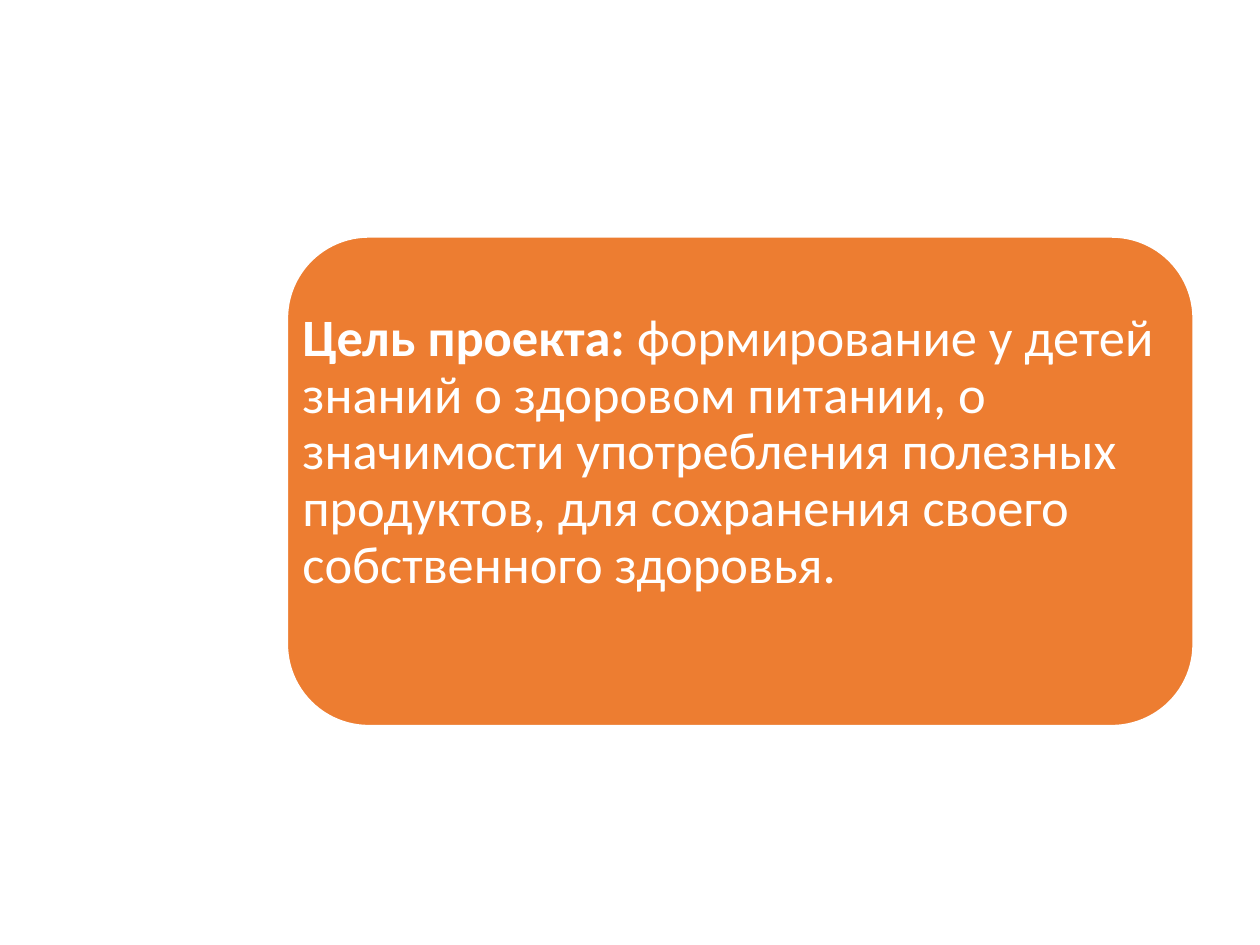
from pptx import Presentation
from pptx.dml.color import RGBColor
from pptx.enum.shapes import MSO_SHAPE
from pptx.enum.text import MSO_ANCHOR, PP_ALIGN
from pptx.util import Inches, Pt

ROUNDED = MSO_SHAPE.ROUNDED_RECTANGLE
MIDDLE = MSO_ANCHOR.MIDDLE
LEFT = PP_ALIGN.LEFT

WIDTH, HEIGHT = 10, 7.5
FONT = "Calibri"
ORANGE, WHITE = "ED7D31", "FFFFFF"
INSET = 0.12
TEXT_LIFT = 0.45  # one line of text, kept free below the statement

GOAL_AREA = (2.28, 1.88, 7.19, 3.88)
GOAL_TEXT = [
    ("Цель проекта:", True),
    (" формирование у детей знаний о здоровом питании, о значимости "
     "употребления полезных продуктов, для сохранения своего "
     "собственного здоровья.", False),
]


def color(hex_value):
    return RGBColor.from_string(hex_value)


def add_panel(page, area):
    panel = page.shapes.add_shape(ROUNDED, *map(Inches, area))
    panel.shadow.inherit = False
    panel.fill.solid()
    panel.fill.fore_color.rgb = color(ORANGE)
    panel.line.color.rgb = color(WHITE)
    panel.line.width = Pt(1)


def add_statement(page, area, spans, size):
    box = page.shapes.add_textbox(*map(Inches, area))
    frame = box.text_frame
    frame.word_wrap = True
    frame.vertical_anchor = MIDDLE
    frame.margin_left = frame.margin_right = frame.margin_top = Inches(INSET)
    frame.margin_bottom = Inches(INSET + TEXT_LIFT)

    para = frame.paragraphs[0]
    para.alignment = LEFT
    para.line_spacing = 0.9
    for text, bold in spans:
        span = para.add_run()
        span.text = text
        span.font.name = FONT
        span.font.size = Pt(size)
        span.font.bold = bold
        span.font.color.rgb = color(WHITE)


def main():
    deck = Presentation()
    deck.slide_width, deck.slide_height = Inches(WIDTH), Inches(HEIGHT)
    page = deck.slides.add_slide(deck.slide_layouts[6])

    # Project goal: coloured panel with its statement on top
    add_panel(page, GOAL_AREA)
    add_statement(page, GOAL_AREA, GOAL_TEXT, 30)

    deck.save("out.pptx")


if __name__ == "__main__":
    main()
